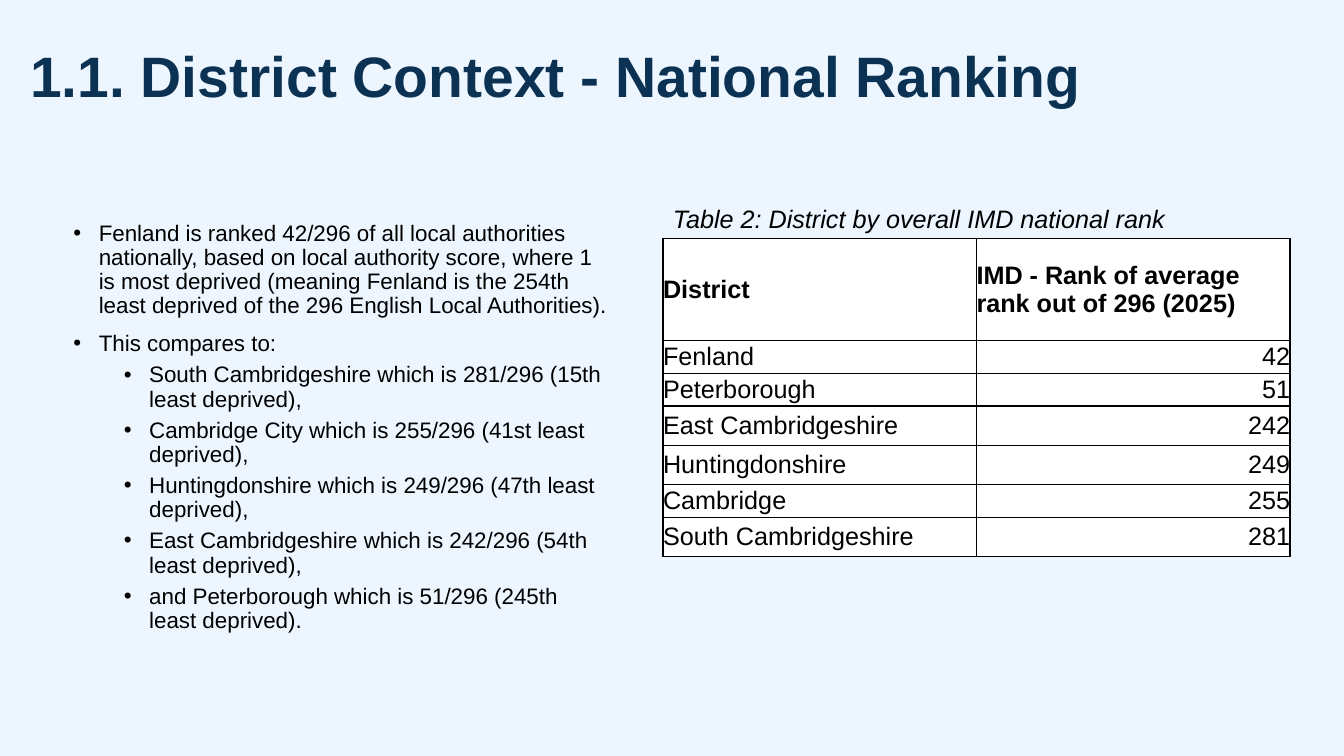
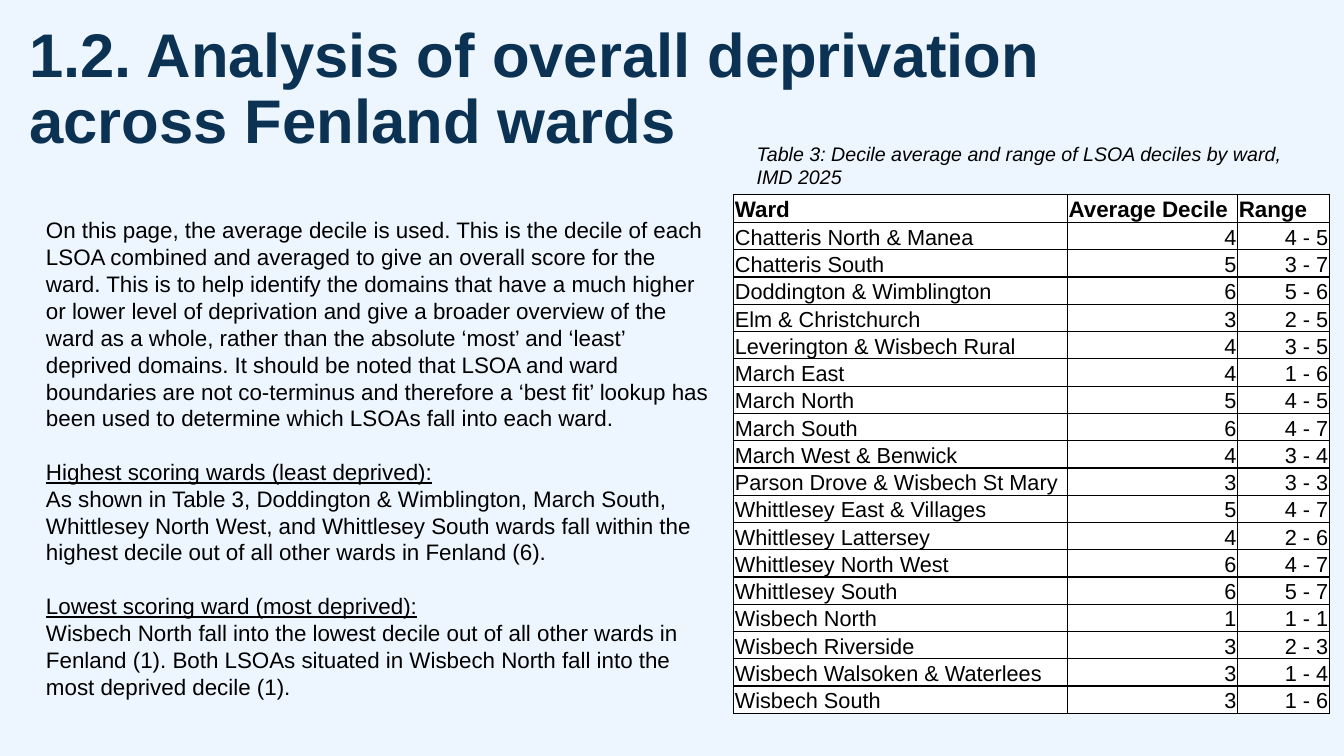
from dataclasses import dataclass

from lxml.etree import SubElement
from pptx import Presentation
from pptx.dml.color import RGBColor as RGB
from pptx.enum.text import MSO_ANCHOR as Anchor, PP_ALIGN as Align
from pptx.oxml import parse_xml
from pptx.oxml.ns import nsdecls, qn
from pptx.util import Cm, Pt


@dataclass(frozen=True)
class Theme:
    font: str = "Arial"
    back: RGB = RGB(0xED, 0xF6, 0xFF)
    head: RGB = RGB(0x0B, 0x31, 0x53)
    ink: RGB = RGB(0, 0, 0)
    paper: RGB = RGB(0xFF, 0xFF, 0xFF)
    body: float = 16
    edge: float = 1
    tight: float = 0.9


class Deck:
    def __init__(self, theme):
        self.theme = theme
        self.prs = Presentation()
        self.prs.slide_width, self.prs.slide_height = Cm(33.87), Cm(19.05)
        self.slide = None

    def page(self):
        self.slide = self.prs.slides.add_slide(self.prs.slide_layouts[6])
        fill = self.slide.background.fill
        fill.solid()
        fill.fore_color.rgb = self.theme.back

    def style(self, para, size, color=None, bold=False, italic=False, under=False):
        for run in para.runs:
            font = run.font
            font.name, font.size = self.theme.font, Pt(size)
            font.bold, font.italic, font.underline = bold, italic, under
            font.color.rgb = color or self.theme.ink

    def box(self, at, pad=True):
        frame = self.slide.shapes.add_textbox(*map(Cm, at)).text_frame
        frame.word_wrap = True
        if not pad:
            frame.margin_left = frame.margin_right = 0
            frame.margin_top = frame.margin_bottom = 0
        return frame

    def fill(self, frame, texts):
        """Put one paragraph per text in the frame and yield each."""
        for i, text in enumerate(texts):
            para = frame.add_paragraph() if i else frame.paragraphs[0]
            para.text = text
            yield para

    def title(self, text, at, size):
        frame = self.box(at, pad=False)
        frame.text = text
        para = frame.paragraphs[0]
        para.line_spacing, para.space_after = self.theme.tight, Pt(6)
        self.style(para, size, self.theme.head, bold=True)

    def caption(self, text, at, size):
        frame = self.box(at)
        frame.text = text
        self.style(frame.paragraphs[0], size, italic=True)

    def bullets(self, items, at):
        """Draw (level, text) items as a bulleted list."""
        frame = self.box(at, pad=False)
        levels, texts = zip(*items)
        for i, para in enumerate(self.fill(frame, texts)):
            level = levels[i]
            props = para._p.get_or_add_pPr()
            props.set("marL", str(Cm(0.64 + 1.27 * level)))
            props.set("indent", str(-Cm(0.64)))
            SubElement(props, qn("a:buFont")).set("typeface", self.theme.font)
            SubElement(props, qn("a:buChar")).set("char", "•")
            para.level = level
            para.line_spacing = self.theme.tight
            if i:
                para.space_before = Pt(5 if level else 10)
            self.style(para, self.theme.body)

    def prose(self, parts, at, gap):
        """Draw (heading, text) parts; a heading is underlined and may be empty."""
        lines = [(text, text == head) for head, body in parts
                 for text in (head, body) if text]
        texts = [text for text, _ in lines]
        for para, (_, under) in zip(self.fill(self.box(at), texts), lines):
            if under:
                para.space_before = Pt(gap)
            self.style(para, self.theme.body, under=under)

    def cell(self, cell, text, size, bold, align, anchor, pad):
        cell.text = text
        cell.vertical_anchor = anchor
        cell.margin_left = cell.margin_right = cell.margin_top = Cm(pad)
        cell.margin_bottom = 0
        cell.fill.solid()
        cell.fill.fore_color.rgb = self.theme.paper
        para = cell.text_frame.paragraphs[0]
        para.alignment = align
        self.style(para, size, bold=bold)
        props = cell._tc.get_or_add_tcPr()
        for i, side in enumerate("LRTB"):
            props.insert(i, parse_xml(
                f'<a:ln{side} {nsdecls("a")} w="{Pt(self.theme.edge)}"><a:solidFill>'
                f'<a:srgbClr val="{self.theme.ink}"/></a:solidFill></a:ln{side}>'))

    def table(self, rows, spot, wide, high, sizes, anchor, pad=0):
        """Draw rows, the first as header; sizes are for header and body text."""
        left, top = spot
        shape = self.slide.shapes.add_table(
            len(rows), len(wide), *map(Cm, (left, top, sum(wide), sum(high))))
        grid = shape.table
        grid.first_row = grid.horz_banding = False
        for col, width in zip(grid.columns, wide):
            col.width = Cm(width)
        for r, row in enumerate(rows):
            grid.rows[r].height = Cm(high[r])
            for c, text in enumerate(row):
                align = Align.RIGHT if r and c else Align.LEFT
                self.cell(grid.cell(r, c), text, sizes[min(r, 1)], r == 0,
                          align, anchor, pad)


RANKS = [
    ("District", "IMD - Rank of average rank out of 296 (2025)"),
    ("Fenland", "42"),
    ("Peterborough", "51"),
    ("East Cambridgeshire", "242"),
    ("Huntingdonshire", "249"),
    ("Cambridge", "255"),
    ("South Cambridgeshire", "281"),
]

POINTS = [
    (0, "Fenland is ranked 42/296 of all local authorities nationally, based on "
        "local authority score, where 1 is most deprived (meaning Fenland is the "
        "254th least deprived of the 296 English Local Authorities)."),
    (0, "This compares to:"),
    (1, "South Cambridgeshire which is 281/296 (15th least deprived),"),
    (1, "Cambridge City which is 255/296 (41st least deprived),"),
    (1, "Huntingdonshire which is 249/296 (47th least deprived),"),
    (1, "East Cambridgeshire which is 242/296 (54th least deprived),"),
    (1, "and Peterborough which is 51/296 (245th least deprived)."),
]

WARDS = [
    ("Ward", "Average Decile", "Range"),
    ("Chatteris North & Manea", "4", "4 - 5"),
    ("Chatteris South", "5", "3 - 7"),
    ("Doddington & Wimblington", "6", "5 - 6"),
    ("Elm & Christchurch", "3", "2 - 5"),
    ("Leverington & Wisbech Rural", "4", "3 - 5"),
    ("March East", "4", "1 - 6"),
    ("March North", "5", "4 - 5"),
    ("March South", "6", "4 - 7"),
    ("March West & Benwick", "4", "3 - 4"),
    ("Parson Drove & Wisbech St Mary", "3", "3 - 3"),
    ("Whittlesey East & Villages", "5", "4 - 7"),
    ("Whittlesey Lattersey", "4", "2 - 6"),
    ("Whittlesey North West", "6", "4 - 7"),
    ("Whittlesey South", "6", "5 - 7"),
    ("Wisbech North", "1", "1 - 1"),
    ("Wisbech Riverside", "3", "2 - 3"),
    ("Wisbech Walsoken & Waterlees", "3", "1 - 4"),
    ("Wisbech South", "3", "1 - 6"),
]

NOTES = [
    ("", "On this page, the average decile is used. This is the decile of each LSOA "
         "combined and averaged to give an overall score for the ward. This is to "
         "help identify the domains that have a much higher or lower level of "
         "deprivation and give a broader overview of the ward as a whole, rather "
         "than the absolute ‘most’ and ‘least’ deprived domains. It should be noted "
         "that LSOA and ward boundaries are not co-terminus and therefore a ‘best "
         "fit’ lookup has been used to determine which LSOAs fall into each ward."),
    ("Highest scoring wards (least deprived):",
     "As shown in Table 3, Doddington & Wimblington, March South, Whittlesey North "
     "West, and Whittlesey South wards fall within the highest decile out of all "
     "other wards in Fenland (6)."),
    ("Lowest scoring ward (most deprived):",
     "Wisbech North fall into the lowest decile out of all other wards in Fenland "
     "(1). Both LSOAs situated in Wisbech North fall into the most deprived decile "
     "(1)."),
]


def ranking(deck):
    deck.page()
    deck.title("1.1. District Context - National Ranking",
               (0.76, 1.22, 28.6, 2.21), 40.7)
    deck.bullets(POINTS, (1.85, 5.59, 13.51, 11.56))
    low, tall = 0.82, 0.99
    deck.table(RANKS, (16.71, 6.02), (7.9, 7.9),
               (2.57, low, low, tall, tall, low, tall), (18, 18), Anchor.MIDDLE)
    deck.caption("Table 2: District by overall IMD national rank",
                 (16.71, 5, 15.8, 1.02), 18)


def wards(deck):
    deck.page()
    deck.title("1.2. Analysis of overall deprivation across Fenland wards",
               (0.74, 0.61, 27.41, 3.38), 44)
    deck.prose(NOTES, (0.91, 5.33, 17.2, 12.57), gap=19)
    deck.caption("Table 3: Decile average and range of LSOA deciles by ward, IMD 2025",
                 (18.82, 3.45, 14.12, 1.45), 14)
    count = len(WARDS)
    deck.table(WARDS, (18.49, 4.9), (8.41, 4.29, 2.31), [12.83 / count] * count,
               (16, 15.5), Anchor.BOTTOM, pad=0.03)


def main():
    deck = Deck(Theme())
    ranking(deck)
    wards(deck)
    deck.prs.save("out.pptx")


if __name__ == "__main__":
    main()
